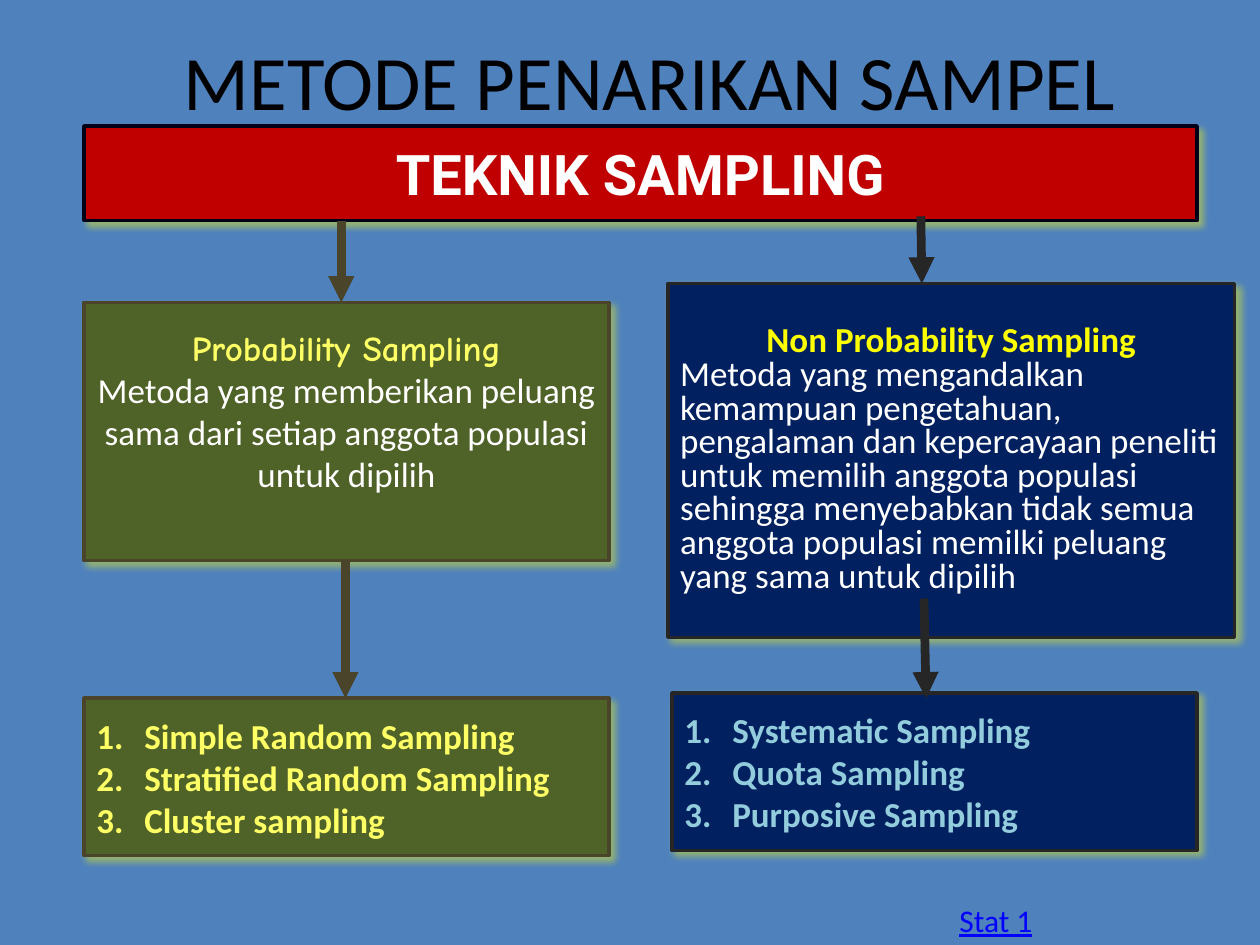
from lxml.etree import SubElement
from pptx import Presentation
from pptx.dml.color import RGBColor
from pptx.enum.shapes import MSO_CONNECTOR, MSO_SHAPE
from pptx.enum.text import MSO_ANCHOR, PP_ALIGN
from pptx.oxml import parse_xml
from pptx.oxml.ns import nsdecls, qn
from pptx.util import Inches, Pt

THEME = {
    "background": "4F81BD", "black": "000000", "white": "FFFFFF",
    "red": "C00000", "red_edge": "000019",
    "green": "4F6228", "green_edge": "4A452A", "pale_yellow": "FFFF66",
    "navy": "002060", "navy_edge": "262626", "pale_blue": "93CDDD",
    "yellow": "FFFF00", "link": "0000FF",
    "font": "Calibri", "banner_font": "Roboto", "accent_font": "Comic Neue",
    "title": 44, "banner": 32, "body": 20, "small": 18,
    "edge": 2, "arrow": 5,
}
SHADOW = f"""<a:effectLst {nsdecls('a')}>
  <a:outerShdw blurRad="{Pt(4)}" dist="{Pt(3)}" dir="2700000" algn="tl" rotWithShape="0">
    <a:srgbClr val="{THEME['yellow']}"><a:alpha val="40000"/></a:srgbClr>
  </a:outerShdw>
</a:effectLst>"""

# The slide is a grid of 120 columns by 90 rows.
deck = Presentation()
deck.slide_width, deck.slide_height = Inches(10), Inches(7.5)
COLUMN, ROW = deck.slide_width / 120, deck.slide_height / 90


def on_grid(*cells):
    """Turn alternating column and row counts into slide lengths."""
    return [round(cell * (ROW if i % 2 else COLUMN)) for i, cell in enumerate(cells)]


def write(frame, text, color, size="body", font="font", bold=False, underline=None,
          align=PP_ALIGN.LEFT, spacing=None, hanging=0, numbered=False):
    """Add one paragraph, filling the first one if it is still empty."""
    para = frame.paragraphs[0] if not frame.text else frame.add_paragraph()
    para.alignment = align
    if spacing:
        para.line_spacing = spacing
    if hanging:
        properties = para._p.get_or_add_pPr()
        properties.set("marL", str(Inches(hanging)))
        properties.set("indent", str(-Inches(hanging)))
        if numbered:
            SubElement(properties, qn("a:buFont"), typeface="+mj-lt")
            SubElement(properties, qn("a:buAutoNum"), type="arabicPeriod")
    span = para.add_run()
    span.text = text
    span.font.name, span.font.size = THEME[font], Pt(THEME[size])
    span.font.bold, span.font.underline = bold, underline
    span.font.color.rgb = RGBColor.from_string(THEME[color])


page = deck.slides.add_slide(deck.slide_layouts[5])
page.background.fill.solid()
page.background.fill.fore_color.rgb = RGBColor.from_string(THEME["background"])

# Title and footer label
title = page.shapes.title
title.left, title.top, title.width, title.height = on_grid(6.6, 3, 110.6, 9.2)
title.text_frame.vertical_anchor = MSO_ANCHOR.MIDDLE
write(title.text_frame, "METODE PENARIKAN SAMPEL", "black", size="title",
      align=PP_ALIGN.CENTER)

label = page.shapes.add_textbox(*on_grid(90.2, 85.2, 9.5, 4.8))
label.text_frame.word_wrap = False
write(label.text_frame, "Stat 1", "link", size="small", underline=True)

# Boxes
BOXES = {
    "banner": ("red", (8, 12, 106, 9)),
    "probability": ("green", (8, 28.8, 50, 24.6)),
    "non_probability": ("navy", (63.6, 27, 54, 33.7)),
    "probability_types": ("green", (8, 66.5, 50, 15)),
    "non_probability_types": ("navy", (64, 66, 50, 15)),
}
frames = {}
for name, (color, cells) in BOXES.items():
    box = page.shapes.add_shape(MSO_SHAPE.RECTANGLE, *on_grid(*cells))
    box.fill.solid()
    box.fill.fore_color.rgb = RGBColor.from_string(THEME[color])
    box.line.color.rgb = RGBColor.from_string(THEME[color + "_edge"])
    box.line.width = Pt(THEME["edge"])
    box._element.spPr.append(parse_xml(SHADOW))
    frames[name] = box.text_frame
    frames[name].word_wrap = True
    frames[name].vertical_anchor = MSO_ANCHOR.MIDDLE

write(frames["banner"], "TEKNIK SAMPLING", "white", size="banner",
      font="banner_font", bold=True, align=PP_ALIGN.CENTER)

frames["probability"].margin_bottom = Inches(0.38)
write(frames["probability"], "Probability Sampling", "pale_yellow",
      font="accent_font", bold=True, align=PP_ALIGN.CENTER)
write(frames["probability"],
      "Metoda yang memberikan peluang sama dari setiap anggota populasi untuk dipilih",
      "white", align=PP_ALIGN.CENTER)

write(frames["non_probability"], "Non Probability Sampling", "yellow", bold=True,
      align=PP_ALIGN.CENTER, spacing=0.8, hanging=0.67)
for line in ("Metoda yang mengandalkan",
             "kemampuan pengetahuan,",
             "pengalaman dan kepercayaan peneliti",
             "untuk memilih anggota populasi",
             "sehingga menyebabkan tidak semua",
             "anggota populasi memilki peluang",
             "yang sama untuk dipilih"):
    write(frames["non_probability"], line, "white", spacing=0.8, hanging=0.67)

TYPES = {
    "probability_types": ("pale_yellow", (
        "Simple Random Sampling", "Stratified Random Sampling", "Cluster sampling")),
    "non_probability_types": ("pale_blue", (
        "Systematic Sampling", "Quota Sampling", "Purposive Sampling")),
}
for name, (color, items) in TYPES.items():
    for item in items:
        write(frames[name], item, color, bold=True, hanging=0.38, numbered=True)

# Arrows
for color, ends in (
    ("green_edge", (32.5, 21, 32.5, 28.8)),
    ("green_edge", (32.9, 53.5, 32.9, 66.5)),
    ("navy_edge", (87.7, 20.6, 87.8, 27)),
    ("navy_edge", (88, 57, 88.2, 66.5)),
):
    arrow = page.shapes.add_connector(MSO_CONNECTOR.STRAIGHT, *on_grid(*ends))
    arrow.line.color.rgb = RGBColor.from_string(THEME[color])
    arrow.line.width = Pt(THEME["arrow"])
    SubElement(arrow.line._get_or_add_ln(), qn("a:tailEnd"), type="triangle")
    SubElement(arrow._element.spPr, qn("a:effectLst"))

deck.save("out.pptx")
